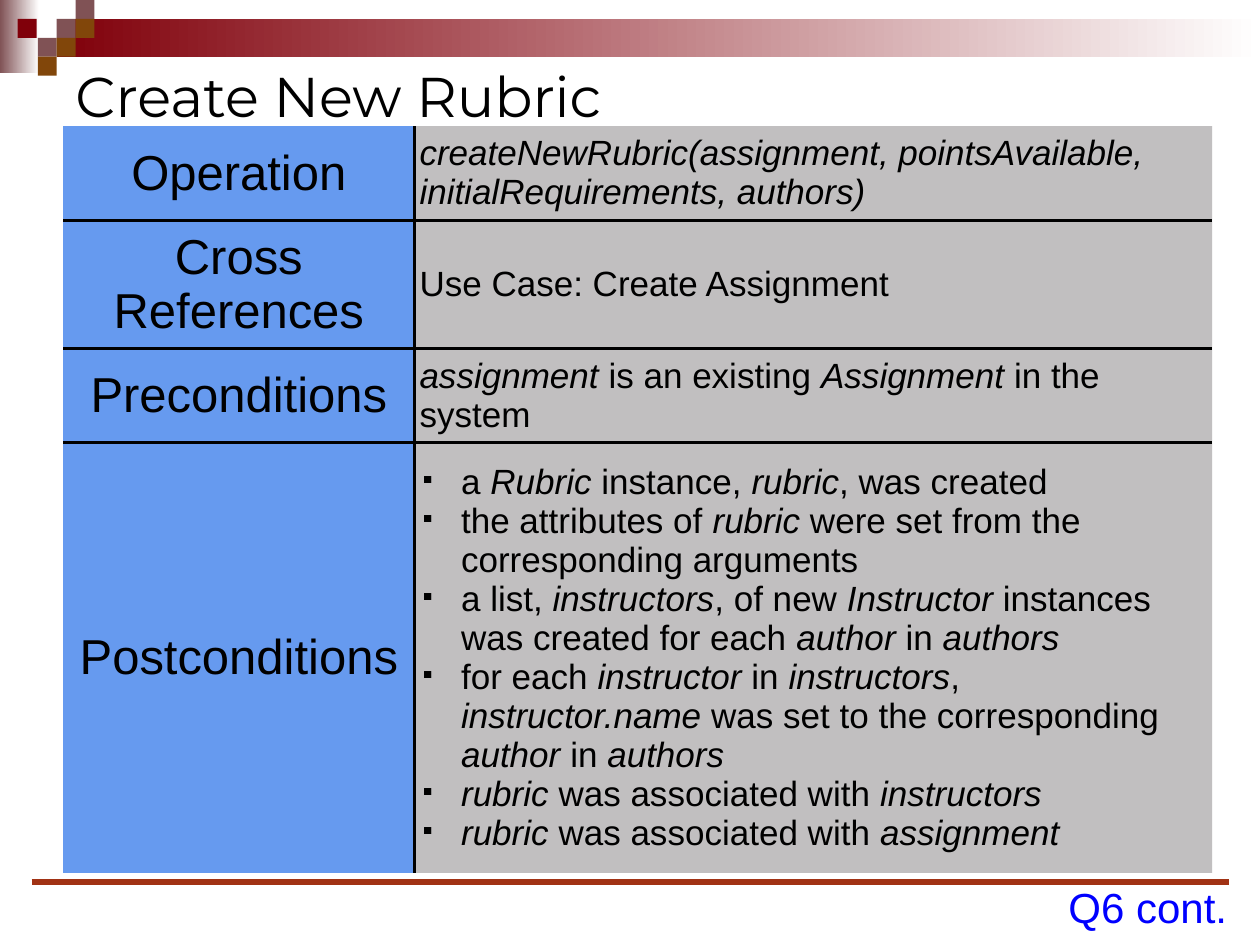
from lxml import etree
from pptx import Presentation
from pptx.dml.color import RGBColor as RGB
from pptx.enum.shapes import MSO_CONNECTOR as Line, MSO_SHAPE as Shape
from pptx.enum.text import MSO_ANCHOR as Anchor, PP_ALIGN as Align
from pptx.oxml.ns import qn
from pptx.util import Inches, Pt

COLORS = {
    "red": "80000A", "mauve": "805255", "brown": "81460A", "white": "FFFFFF",
    "rule": "A13214", "black": "000000", "link": "0000FF",
    "label": "0057E5", "detail": "544E51",
}


def add(parent, tag, **attrs):
    return etree.SubElement(parent, qn(tag), attrs)


def write(frame, text, size=20, font="Arial", color="black", align=Align.LEFT,
          bullet=False):
    """Fill a frame, one paragraph a line; words between asterisks are italic."""
    for i, line in enumerate(text.split("\n")):
        para = frame.add_paragraph() if i else frame.paragraphs[0]
        para.alignment = align
        if bullet:
            props = para._p.get_or_add_pPr()
            props.set("marL", str(Inches(0.33)))
            props.set("indent", str(-Inches(0.33)))
            add(props, "a:buSzPct", val="62000")
            add(props, "a:buChar", char="▪")
        for j, part in enumerate(line.split("*")):
            if part:
                run = para.add_run()
                run.text = part
                run.font.size = Pt(size)
                run.font.name = font
                run.font.italic = j % 2 == 1
                run.font.color.rgb = RGB.from_string(COLORS[color])


deck = Presentation()
deck.slide_width, deck.slide_height = Inches(10), Inches(7.5)
slide = deck.slides.add_slide(deck.slide_layouts[6])
shapes = slide.shapes

# Corner bands and squares: left, top, width, height, colour, fades to white
side = 0.15
bands = [
    (0, 0, 0.31, 0.58, "mauve", True),
    (0.45, 0.15, 9.55, 0.3, "red", True),
]
squares = [
    (0.45, 0.15, "mauve"), (0.6, 0, "mauve"), (0.6, 0.15, "brown"),
    (0.3, 0.3, "mauve"), (0.14, 0.15, "red"), (0.45, 0.3, "brown"),
    (0.3, 0.45, "brown"),
]
bands += [(x, y, side, side, tone, False) for x, y, tone in squares]
for x, y, w, h, tone, fade in bands:
    box = shapes.add_shape(Shape.RECTANGLE, Inches(x), Inches(y), Inches(w), Inches(h))
    box.shadow.inherit = False
    box.line.fill.background()
    if fade:
        box.fill.gradient()
        box.fill.gradient_angle = 0
        for stop, name in zip(box.fill.gradient_stops, (tone, "white")):
            stop.color.rgb = RGB.from_string(COLORS[name])
    else:
        box.fill.solid()
        box.fill.fore_color.rgb = RGB.from_string(COLORS[tone])

rule = shapes.add_connector(Line.STRAIGHT, Inches(0.25), Inches(7), Inches(9.75), Inches(7))
rule.line.width = Pt(3)
rule.line.color.rgb = RGB.from_string(COLORS["rule"])
add(rule._element.spPr, "a:effectLst")

title = shapes.add_textbox(Inches(0.5), Inches(0.42), Inches(9), Inches(0.67)).text_frame
title.word_wrap = True
title.vertical_anchor = Anchor.MIDDLE
write(title, "Create New Rubric", size=32, font="Montserrat")

note = shapes.add_textbox(Inches(8.47), Inches(7), Inches(1.27), Inches(0.4)).text_frame
note.word_wrap = False
note.vertical_anchor = Anchor.MIDDLE
note.margin_left = note.margin_right = note.margin_top = note.margin_bottom = Inches(0)
write(note, "Q6 cont.", size=24, color="link", align=Align.RIGHT)

# Operation contract: label, detail, row height
rows = [
    ("Operation",
     "*createNewRubric(assignment, pointsAvailable, initialRequirements, authors)*", 0.74),
    ("Cross References", "Use Case: Create Assignment", 1.02),
    ("Preconditions", "*assignment* is an existing *Assignment* in the system", 0.74),
    ("Postconditions", "\n".join([
        "a *Rubric* instance, *rubric*, was created",
        "the attributes of *rubric* were set from the corresponding arguments",
        "a list, *instructors*, of new *Instructor* instances"
        " was created for each *author* in *authors*",
        "for each *instructor* in *instructors*, *instructor.name*"
        " was set to the corresponding *author* in *authors*",
        "*rubric *was associated with *instructors*",
        "*rubric *was associated with *assignment*",
    ]), 3.41),
]
table = shapes.add_table(len(rows), 2, Inches(0.5), Inches(1), Inches(9.12), Inches(5.91)).table
table.first_row = table.horz_banding = False
table.columns[0].width, table.columns[1].width = Inches(2.79), Inches(6.33)
last = len(rows) - 1
for r, (label, detail, high) in enumerate(rows):
    table.rows[r].height = Inches(high)
    left, right = table.cell(r, 0), table.cell(r, 1)
    write(left.text_frame, label, size=28, align=Align.CENTER)
    write(right.text_frame, detail, bullet=r == last)
    for c, (cell, tone, alpha) in enumerate([(left, "label", 60), (right, "detail", 36)]):
        cell.vertical_anchor = Anchor.MIDDLE
        cell.margin_left = cell.margin_right = Inches(0.04)
        cell.margin_top = cell.margin_bottom = Inches(0.04)
        props = cell._tc.get_or_add_tcPr()
        # Only the inner edges carry a line
        inner = {"L": c == 1, "R": c == 0, "T": r > 0, "B": r < last}
        for edge, shown in inner.items():
            line = add(props, f"a:ln{edge}", w=str(Pt(2)))
            if shown:
                add(add(line, "a:solidFill"), "a:srgbClr", val=COLORS["black"])
            else:
                add(line, "a:noFill")
        cell.fill.solid()
        cell.fill.fore_color.rgb = RGB.from_string(COLORS[tone])
        shade = props.find(qn("a:solidFill")).find(qn("a:srgbClr"))
        add(shade, "a:alpha", val=str(alpha * 1000))

deck.save("out.pptx")
